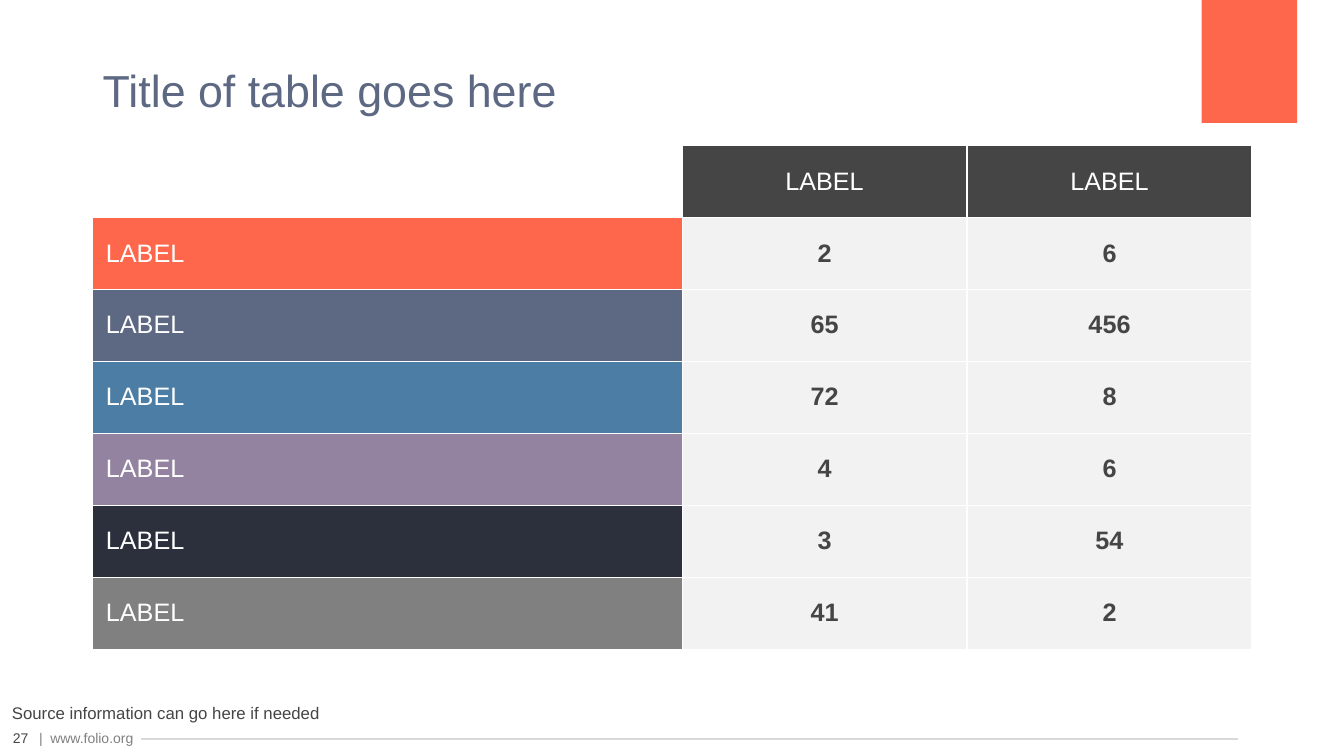
from lxml import etree
from pptx import Presentation
from pptx.dml.color import RGBColor
from pptx.enum.shapes import MSO_CONNECTOR, MSO_SHAPE
from pptx.enum.text import MSO_ANCHOR as Anchor, PP_ALIGN as Align
from pptx.oxml.ns import qn
from pptx.util import Cm, Pt

FONT = "Arial"
COLORS = {
    "white": "FFFFFF",
    "text": "454545",
    "orange": "FF674C",
    "slate": "5D6883",
    "blue": "4C7EA5",
    "mauve": "9383A0",
    "navy": "2B303C",
    "gray": "808080",
    "rule": "D9D9D9",
    "cell": "F2F2F2",
}
HEADERS = ["LABEL", "LABEL"]
ROWS = [
    ("LABEL", "orange", ["2", "6"]),
    ("LABEL", "slate", ["65", "456"]),
    ("LABEL", "blue", ["72", "8"]),
    ("LABEL", "mauve", ["4", "6"]),
    ("LABEL", "navy", ["3", "54"]),
    ("LABEL", "gray", ["41", "2"]),
]
COLUMN_WIDTHS = [14.85, 7.18, 7.18]
TABLE_HEIGHT = 12.7


def rgb(name):
    return RGBColor.from_string(COLORS[name])


def style_paragraph(paragraph, size, color, align=Align.LEFT, bold=False):
    paragraph.alignment = align
    font = paragraph.font
    font.name, font.size, font.bold = FONT, Pt(size), bold
    font.color.rgb = rgb(color)


def add_text(slide, text, box, size, color, align=Align.LEFT,
             anchor=Anchor.TOP, line_spacing=None, tab=None):
    shape = slide.shapes.add_textbox(*map(Cm, box))
    frame = shape.text_frame
    frame.word_wrap = True
    frame.vertical_anchor = anchor
    paragraph = frame.paragraphs[0]
    paragraph.text = text
    if line_spacing:
        paragraph.line_spacing = line_spacing
    if tab:
        properties = paragraph._p.get_or_add_pPr()
        tabs = etree.SubElement(properties, qn("a:tabLst"))
        etree.SubElement(tabs, qn("a:tab"), pos=str(Cm(tab)), algn="l")
    style_paragraph(paragraph, size, color, align)


def add_block(slide, box, color):
    shape = slide.shapes.add_shape(MSO_SHAPE.RECTANGLE, *map(Cm, box))
    shape.shadow.inherit = False
    shape.fill.solid()
    shape.fill.fore_color.rgb = rgb(color)
    shape.line.fill.background()


def add_rule(slide, left, right, y, color):
    line = slide.shapes.add_connector(
        MSO_CONNECTOR.STRAIGHT, Cm(left), Cm(y), Cm(right), Cm(y))
    line.line.color.rgb = rgb(color)
    line.line.width = Pt(1)
    etree.SubElement(line._element.spPr, qn("a:effectLst"))


def set_borders(cell, color):
    properties = cell._tc.get_or_add_tcPr()
    for side in ("lnL", "lnR", "lnT", "lnB"):
        border = etree.SubElement(properties, qn(f"a:{side}"), w=str(Pt(1)))
        fill = etree.SubElement(border, qn("a:solidFill"))
        etree.SubElement(fill, qn("a:srgbClr"), val=COLORS[color])


def fill_cell(cell, text, fill, color, align=Align.CENTER, bold=False):
    set_borders(cell, "white")
    if fill:
        cell.fill.solid()
        cell.fill.fore_color.rgb = rgb(fill)
    else:
        cell.fill.background()
    cell.vertical_anchor = Anchor.MIDDLE
    cell.margin_left = cell.margin_right = Cm(0.33)
    cell.margin_top = cell.margin_bottom = Cm(0.13)
    cell.text = text
    style_paragraph(cell.text_frame.paragraphs[0], 18, color, align, bold)


def add_label_table(slide, left, top):
    row_count = len(ROWS) + 1
    table = slide.shapes.add_table(
        row_count, len(COLUMN_WIDTHS), Cm(left), Cm(top),
        Cm(sum(COLUMN_WIDTHS)), Cm(TABLE_HEIGHT)).table
    table.first_row = table.horz_banding = False
    for column, width in zip(table.columns, COLUMN_WIDTHS):
        column.width = Cm(width)
    for row in table.rows:
        row.height = Cm(TABLE_HEIGHT / row_count)

    # Header row with an empty corner
    fill_cell(table.cell(0, 0), "", None, "text")
    for column, header in enumerate(HEADERS, 1):
        fill_cell(table.cell(0, column), header, "text", "white")

    # Coloured row labels and their values
    for row, (label, color, values) in enumerate(ROWS, 1):
        fill_cell(table.cell(row, 0), label, color, "white", Align.LEFT)
        for column, value in enumerate(values, 1):
            fill_cell(table.cell(row, column), value, "cell", "text", bold=True)


def main():
    presentation = Presentation()
    presentation.slide_width = Cm(33.87)
    presentation.slide_height = Cm(19.05)
    slide = presentation.slides.add_slide(presentation.slide_layouts[6])

    # Footer
    add_text(slide, "|\twww.folio.org", (0.74, 18.26, 4.93, 0.69), 10, "gray",
             tab=0.28)
    add_text(slide, "27", (-0.1, 18.26, 1.24, 0.69), 10, "text",
             Align.CENTER, Anchor.MIDDLE)
    add_rule(slide, 3.56, 31.19, 18.62, "rule")

    # Corner block and title
    add_block(slide, (30.28, 0, 2.41, 3.1), "orange")
    add_text(slide, "Title of table goes here", (2.34, 1.32, 29.21, 2.84),
             32, "slate", line_spacing=1.1)

    # Table and its source
    add_label_table(slide, 2.34, 3.66)
    add_text(slide, "Source information can go here if needed",
             (0.05, 17.45, 10.13, 0.89), 12, "text",
             anchor=Anchor.BOTTOM, line_spacing=1.1)

    presentation.save("out.pptx")


if __name__ == "__main__":
    main()
